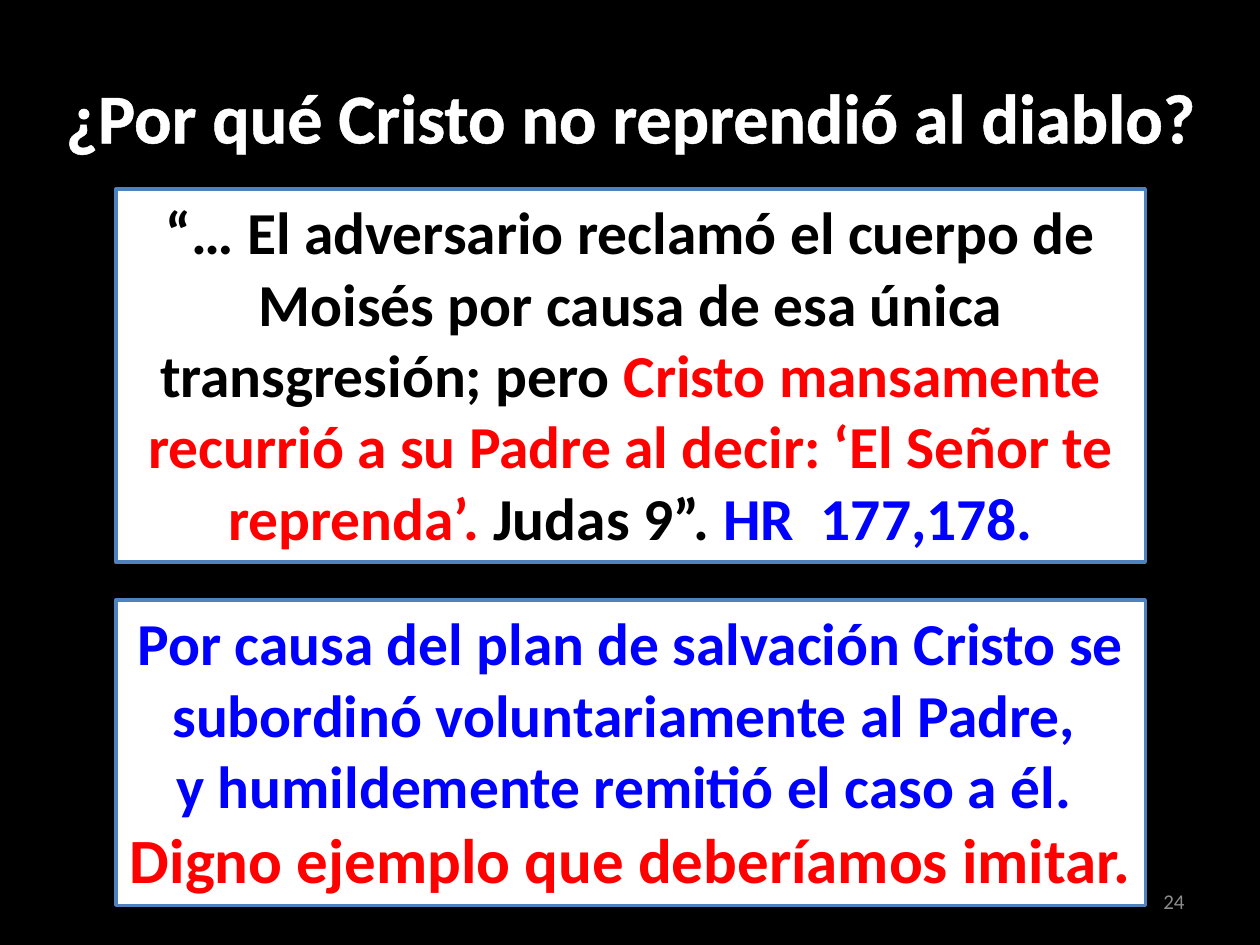
import copy
import dataclasses

import lxml.etree
import pptx
import pptx.dml.color
import pptx.enum.shapes
import pptx.enum.text
import pptx.oxml.ns
import pptx.util

ALIGN = pptx.enum.text.PP_ALIGN
ANCHOR = pptx.enum.text.MSO_ANCHOR
AUTO_SIZE = pptx.enum.text.MSO_AUTO_SIZE


@dataclasses.dataclass(frozen=True)
class Theme:
    font: str = "Calibri"
    background: str = "000000"
    white: str = "FFFFFF"
    black: str = "000000"
    red: str = "FF0000"
    blue: str = "0000FF"
    border: str = "4F81BD"
    muted: str = "8C8C8C"
    title_size: int = 40
    body_size: int = 34
    closing_size: int = 36
    number_size: int = 12
    border_width: float = 2
    outline_width: float = 0.75


def rgb(color):
    return pptx.dml.color.RGBColor.from_string(color)


class SlideBuilder:
    def __init__(self, presentation, theme):
        self.presentation = presentation
        self.theme = theme
        self.slide = presentation.slides.add_slide(presentation.slide_layouts[5])
        fill = self.slide.background.fill
        fill.solid()
        fill.fore_color.rgb = rgb(theme.background)

    def area(self, left, top, width, height):
        slide_width = self.presentation.slide_width
        slide_height = self.presentation.slide_height
        return (round(left * slide_width), round(top * slide_height),
                round(width * slide_width), round(height * slide_height))

    def outline(self, run):
        properties = run.font._element
        line = lxml.etree.Element(pptx.oxml.ns.qn("a:ln"))
        line.set("w", str(pptx.util.Pt(self.theme.outline_width)))
        fill = properties.find(pptx.oxml.ns.qn("a:solidFill"))
        line.append(copy.deepcopy(fill))
        properties.insert(0, line)

    def fill_text(self, frame, paragraphs, align=ALIGN.CENTER, anchor=ANCHOR.TOP,
                  bold=True, auto_size=AUTO_SIZE.SHAPE_TO_FIT_TEXT):
        frame.word_wrap = True
        frame.auto_size = auto_size
        frame.vertical_anchor = anchor
        for index, pieces in enumerate(paragraphs):
            paragraph = frame.paragraphs[0] if index == 0 else frame.add_paragraph()
            paragraph.alignment = align
            for text, color, size in pieces:
                run = paragraph.add_run()
                run.text = text
                run.font.name = self.theme.font
                run.font.size = pptx.util.Pt(size)
                run.font.bold = bold
                run.font.color.rgb = rgb(color)
                if bold:
                    self.outline(run)

    def title(self, text, *shares):
        shape = self.slide.shapes.title
        shape.left, shape.top, shape.width, shape.height = self.area(*shares)
        self.fill_text(shape.text_frame,
                       [[(text, self.theme.white, self.theme.title_size)]])

    def panel(self, paragraphs, *shares):
        shape = self.slide.shapes.add_shape(
            pptx.enum.shapes.MSO_SHAPE.RECTANGLE, *self.area(*shares))
        shape.shadow.inherit = False
        shape.fill.solid()
        shape.fill.fore_color.rgb = rgb(self.theme.white)
        shape.line.color.rgb = rgb(self.theme.border)
        shape.line.width = pptx.util.Pt(self.theme.border_width)
        self.fill_text(shape.text_frame, paragraphs)

    def page_number(self, text, *shares):
        shape = self.slide.shapes.add_textbox(*self.area(*shares))
        self.fill_text(shape.text_frame,
                       [[(text, self.theme.muted, self.theme.number_size)]],
                       ALIGN.RIGHT, ANCHOR.MIDDLE, False, AUTO_SIZE.NONE)


def main():
    presentation = pptx.Presentation()
    presentation.slide_width = pptx.util.Inches(10)
    presentation.slide_height = pptx.util.Inches(7.5)
    theme = Theme()
    builder = SlideBuilder(presentation, theme)
    size = theme.body_size
    panel_left, panel_width = 0.092, 0.817

    builder.page_number("24", 0.717, 0.927, 0.233, 0.053)
    builder.title("¿Por qué Cristo no reprendió al diablo?", 0.036, 0.071, 0.929, 0.103)
    builder.panel([[
        ("“… El adversario reclamó el cuerpo de Moisés por causa de esa única "
         "transgresión; pero ", theme.black, size),
        ("Cristo mansamente recurrió a su Padre al decir: ‘El Señor te reprenda’. ",
         theme.red, size),
        ("Judas 9”. ", theme.black, size),
        ("HR  177,178.", theme.blue, size),
    ]], panel_left, 0.2, panel_width, 0.395)
    builder.panel([
        [("Por causa del plan de salvación Cristo se subordinó voluntariamente al Padre, ",
          theme.blue, size)],
        [("y humildemente remitió el caso a él. ", theme.blue, size)],
        [("Digno ejemplo que deberíamos imitar.", theme.red, theme.closing_size)],
    ], panel_left, 0.635, panel_width, 0.323)
    presentation.save("out.pptx")


if __name__ == "__main__":
    main()
